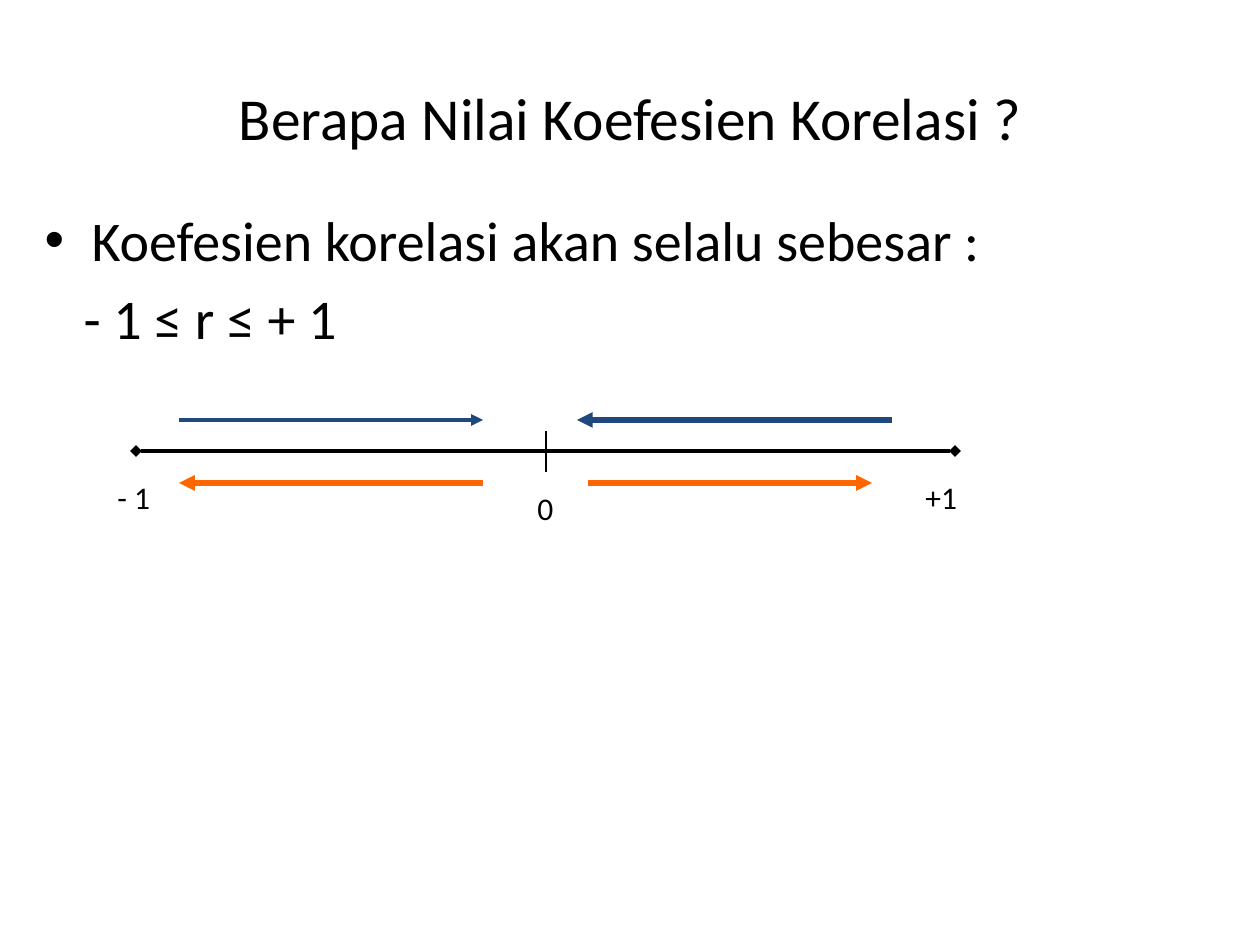
from lxml import etree
from pptx import Presentation
from pptx.dml.color import RGBColor
from pptx.enum.shapes import MSO_CONNECTOR
from pptx.enum.text import MSO_ANCHOR, MSO_AUTO_SIZE, PP_ALIGN
from pptx.oxml.ns import qn
from pptx.util import Emu, Pt

STRAIGHT = MSO_CONNECTOR.STRAIGHT
MIDDLE, TOP = MSO_ANCHOR.MIDDLE, MSO_ANCHOR.TOP
CENTER, LEFT = PP_ALIGN.CENTER, PP_ALIGN.LEFT
NO_AUTOFIT = MSO_AUTO_SIZE.NONE

EMU_PER_PX = 914400 / 126
FONT = "Calibri"
BLACK, BLUE, ORANGE = "000000", "1F497D", "FF6600"


def px(length):
    return Emu(round(length * EMU_PER_PX))


def color(hex_string):
    return RGBColor.from_string(hex_string)


def place(shape, box):
    shape.left, shape.top, shape.width, shape.height = map(px, box)


def write_text(shape, *lines, size=18, fill=BLACK, align=LEFT, anchor=TOP):
    frame = shape.text_frame
    frame.word_wrap = True
    frame.auto_size = NO_AUTOFIT
    frame.vertical_anchor = anchor
    frame.text = "\n".join(lines)
    for paragraph in frame.paragraphs:
        paragraph.alignment = align
        for run in paragraph.runs:
            run.font.name = FONT
            run.font.size = Pt(size)
            run.font.color.rgb = color(fill)
    return frame.paragraphs


def set_bullet(paragraph, character=None, margin=0, indent=0):
    properties = paragraph._p.get_or_add_pPr()
    properties.set("marL", str(px(margin)))
    properties.set("indent", str(px(indent)))
    if character:
        etree.SubElement(properties, qn("a:buChar"), char=character)
    else:
        etree.SubElement(properties, qn("a:buNone"))


def add_line(shapes, start, end, stroke=BLACK, width=3, head=None, tail=None):
    line = shapes.add_connector(STRAIGHT, *map(px, (*start, *end)))
    line.line.color.rgb = color(stroke)
    line.line.width = Pt(width)
    outline = line.line._get_or_add_ln()
    for tag, kind in (("a:headEnd", head), ("a:tailEnd", tail)):
        if kind:
            etree.SubElement(outline, qn(tag), type=kind)
    etree.SubElement(line._element.spPr, qn("a:effectLst"))


def add_title(slide, box):
    title = slide.shapes.title
    place(title, box)
    write_text(title, "Berapa Nilai Koefesien Korelasi ?",
               size=34, align=CENTER, anchor=MIDDLE)


def add_body(slide, box):
    body = slide.placeholders[1]
    place(body, box)
    statement, interval = write_text(
        body, "Koefesien korelasi akan selalu sebesar :", "- 1 ≤ r ≤ + 1", size=32)
    set_bullet(statement, "•", margin=47, indent=-47)
    set_bullet(interval, margin=39)


def add_number_line(slide, left, top):
    """Draw the scale from -1 to +1 with arrows towards and away from zero."""
    shapes = slide.shapes.add_group_shape().shapes
    axis_y = top + 31
    add_line(shapes, (left + 31, axis_y), (left + 850, axis_y),
             width=2.25, head="diamond", tail="diamond")
    for text, x, y in (("- 1", 0, 52), ("+1", 808, 52), ("0", 420, 63)):
        label = shapes.add_textbox(px(left + x), px(top + y), px(105), px(50))
        write_text(label, text)
    add_line(shapes, (left + 441, axis_y - 20), (left + 441, axis_y + 21), width=0.75)

    arrows = (
        (787, 472, 0, BLUE, 3),
        (74, 378, 0, BLUE, 2.25),
        (483, 767, 63, ORANGE, 3),
        (378, 74, 63, ORANGE, 3),
    )
    for start, end, y, stroke, width in arrows:
        add_line(shapes, (left + start, top + y), (left + end, top + y),
                 stroke=stroke, width=width, tail="triangle")


def main():
    presentation = Presentation()
    presentation.slide_width, presentation.slide_height = px(1260), px(945)
    slide = presentation.slides.add_slide(presentation.slide_layouts[1])
    add_title(slide, (63, 38, 1134, 158))
    add_body(slide, (32, 199, 1144, 336))
    add_number_line(slide, 105, 420)
    presentation.save("out.pptx")


if __name__ == "__main__":
    main()
